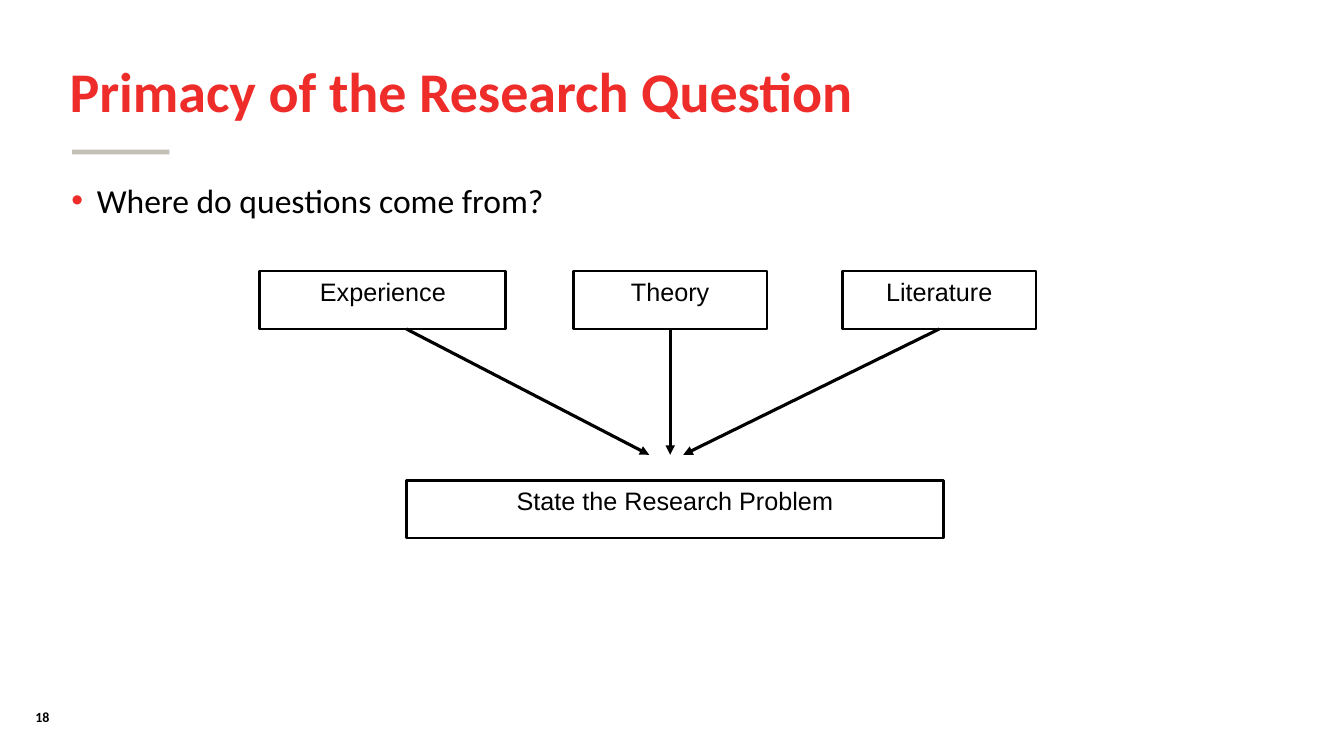
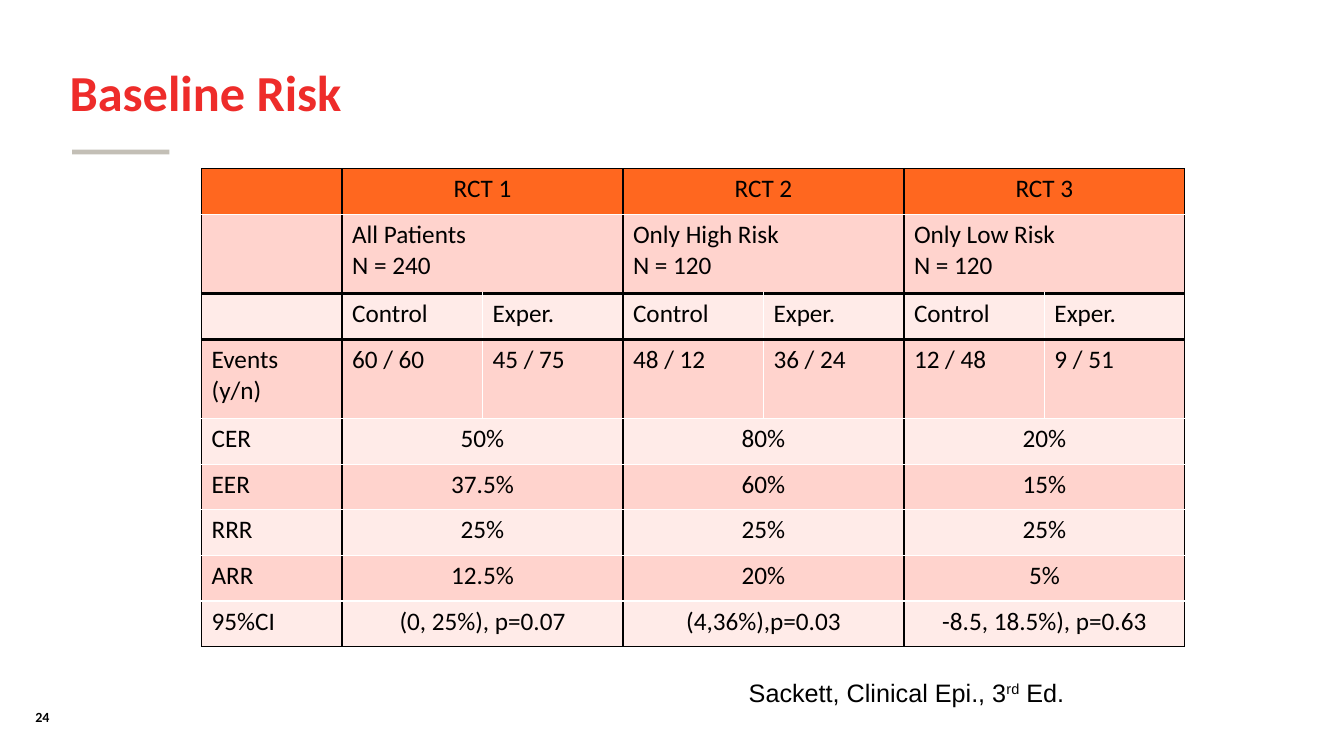
from dataclasses import dataclass
from typing import Optional

from lxml.etree import SubElement
from pptx import Presentation
from pptx.dml.color import RGBColor
from pptx.enum.shapes import MSO_CONNECTOR, MSO_SHAPE
from pptx.enum.text import MSO_ANCHOR, MSO_AUTO_SIZE, PP_ALIGN
from pptx.oxml.ns import qn
from pptx.util import Cm, Pt

# Shared look
RED, GREY, BLACK, WHITE = "EE2C2A", "C3BFB6", "000000", "FFFFFF"
ORANGE, ROSE, PALE = "FF671F", "FFD3CD", "FFEBE8"
HEAD, PLAIN = "Calibri", "Arial"


@dataclass
class Source:
    text: str
    left: float
    width: float
    tip: float                     # where the arrow ends
    start: Optional[float] = None  # where it leaves, if not at the middle


@dataclass
class Trial:
    name: str
    group: str
    size: str
    events: tuple[str, str]
    rates: tuple[str, ...]


SOURCES = [
    Source("Experience", 6.55, 6.2, 16.36, 10.24),
    Source("Theory", 14.45, 4.88, 16.89),
    Source("Literature", 21.23, 4.88, 17.22),
]
LABELS = ("CER", "EER", "RRR", "ARR", "95%CI")
TRIALS = [
    Trial("RCT 1", "All Patients", "N = 240", ("60 / 60", "45 / 75"),
          ("50%", "37.5%", "25%", "12.5%", "(0, 25%), p=0.07")),
    Trial("RCT 2", "Only High Risk", "N = 120", ("48 / 12", "36 / 24"),
          ("80%", "60%", "25%", "20%", "(4,36%),p=0.03")),
    Trial("RCT 3", "Only Low Risk", "N = 120", ("12 / 48", "9 / 51"),
          ("20%", "15%", "25%", "5%", "-8.5, 18.5%), p=0.63")),
]


def rgb(code: str) -> RGBColor:
    return RGBColor.from_string(code)


def put(para, text: str, size: float, face: str = HEAD,
        color: str = BLACK, bold: bool = False):
    """Add one run to a paragraph."""
    run = para.add_run()
    run.text = text
    font = run.font
    font.size, font.name, font.bold = Pt(size), face, bold
    font.color.rgb = rgb(color)
    return run


def text_box(slide, left: float, top: float, width: float, height: float,
             wrap: bool = True):
    """Add a text box and return its first paragraph."""
    box = slide.shapes.add_textbox(Cm(left), Cm(top), Cm(width), Cm(height))
    box.text_frame.word_wrap = wrap
    return box.text_frame.paragraphs[0]


def block(slide, left: float, top: float, width: float, height: float):
    """Add a rectangle with no shadow, fill or line."""
    rect = slide.shapes.add_shape(MSO_SHAPE.RECTANGLE, Cm(left), Cm(top),
                                  Cm(width), Cm(height))
    rect.shadow.inherit = False
    rect.fill.background()
    rect.line.fill.background()
    return rect


def base(deck, title: str, size: float, number: str):
    """Start a slide with its title, short rule and number."""
    slide = deck.slides.add_slide(deck.slide_layouts[5])
    head = slide.shapes.title
    head.left, head.top = Cm(1.5), Cm(1.02)
    head.width, head.height = Cm(28.55), Cm(2.74)
    frame = head.text_frame
    frame.word_wrap = True
    frame.auto_size = MSO_AUTO_SIZE.NONE
    frame.vertical_anchor = MSO_ANCHOR.MIDDLE
    para = frame.paragraphs[0]
    para.alignment, para.line_spacing = PP_ALIGN.LEFT, 0.9
    put(para, title, size, color=RED, bold=True)

    rule = block(slide, 1.82, 3.77, 2.45, 0.12)
    rule.fill.solid()
    rule.fill.fore_color.rgb = rgb(GREY)

    put(text_box(slide, 0.64, 17.72, 2.9, 0.68), number, 10, bold=True)
    return slide


def bullet(para) -> None:
    props = para._p.get_or_add_pPr()
    props.set("marL", str(Cm(0.64)))
    props.set("indent", str(-Cm(0.64)))
    tint = SubElement(props, qn("a:buClr"))
    SubElement(tint, qn("a:srgbClr"), val=RED)
    SubElement(props, qn("a:buFont"), typeface=PLAIN)
    SubElement(props, qn("a:buChar"), char="•")


def frame_box(slide, text: str, left: float, top: float, width: float):
    """Add an outlined box with its text at the top."""
    rect = block(slide, left, top, width, 1.46)
    rect.line.color.rgb = rgb(BLACK)
    rect.line.width = Pt(2)
    rect.text_frame.vertical_anchor = MSO_ANCHOR.TOP
    rect.text_frame.word_wrap = True
    para = rect.text_frame.paragraphs[0]
    para.alignment = PP_ALIGN.CENTER
    put(para, text, 18, PLAIN)
    return rect


def arrow(slide, box, source: Source) -> None:
    """Draw an arrow from a source box down to its tip."""
    start = Cm(source.start or source.tip)
    line = slide.shapes.add_connector(MSO_CONNECTOR.STRAIGHT, start,
                                      box.top + box.height,
                                      Cm(source.tip), Cm(11.46))
    if source.start is None:
        line.begin_connect(box, 2)
    line.line.color.rgb = rgb(BLACK)
    line.line.width = Pt(2.25)
    SubElement(line.line._get_or_add_ln(), qn("a:tailEnd"), type="triangle")
    SubElement(line._element.spPr, qn("a:effectLst"))


def edge(cell, side: str, color: str, width: float = 1) -> None:
    props = cell._tc.get_or_add_tcPr()
    line = SubElement(props, qn(f"a:ln{side}"), w=str(Pt(width)))
    fill = SubElement(line, qn("a:solidFill"))
    SubElement(fill, qn("a:srgbClr"), val=color)


def write(cell, lines: tuple[str, ...], center: bool) -> None:
    """Fill a cell with one paragraph per line."""
    frame = cell.text_frame
    for i, text in enumerate(lines):
        para = frame.add_paragraph() if i else frame.paragraphs[0]
        para.alignment = PP_ALIGN.CENTER if center else PP_ALIGN.LEFT
        put(para, text, 18)


def grid(slide) -> None:
    """Build the table: a label column, then two columns per trial."""
    tall, split = (1, 3), (2, 3)
    names = ("", "", "", "Events (y/n)") + LABELS
    rows, cols = len(names), 1 + 2 * len(TRIALS)
    table = slide.shapes.add_table(rows, cols, Cm(5.08), Cm(4.25),
                                   Cm(24.78), Cm(12.05)).table
    table.first_row = table.horz_banding = False
    for col in table.columns:
        col.width = Cm(3.54)
    for r, row in enumerate(table.rows):
        row.height = Cm(2 if r in tall else 1.15)

    # Borders, then fills
    under = {1: (BLACK, 2.25), 2: (BLACK, 2.25), rows - 1: (BLACK, 1)}
    above = {r + 1: look for r, look in under.items()} | {0: (BLACK, 1)}
    for r in range(rows):
        for c in range(cols):
            cell = table.cell(r, c)
            first = c % 2 == 1
            last = c > 0 and not first
            if r in split or not last:
                edge(cell, "L", WHITE if last else BLACK)
            edge(cell, "R", WHITE if first and r in split else BLACK)
            edge(cell, "T", *above.get(r, (WHITE, 1)))
            edge(cell, "B", *under.get(r, (WHITE, 1)))
            cell.fill.solid()
            shade = ORANGE if r == 0 else ROSE if r % 2 else PALE
            cell.fill.fore_color.rgb = rgb(shade)

    # Texts
    for r, name in enumerate(names):
        write(table.cell(r, 0), (name,), False)
    for i, trial in enumerate(TRIALS):
        c = 1 + 2 * i
        wide = {0: (trial.name,), 1: (trial.group, trial.size)}
        wide |= {4 + k: (rate,) for k, rate in enumerate(trial.rates)}
        for r, lines in wide.items():
            table.cell(r, c).merge(table.cell(r, c + 1))
            write(table.cell(r, c), lines, r != 1)
        for r, pair in zip(split, (("Control", "Exper."), trial.events)):
            for k, text in enumerate(pair):
                write(table.cell(r, c + k), (text,), False)


def question(deck) -> None:
    slide = base(deck, "Primacy of the Research Question", 40, "18")
    para = text_box(slide, 1.55, 4.52, 28.5, 12.09)
    para.line_spacing = 0.9
    bullet(para)
    put(para, "Where do questions come from?", 24)
    for source in SOURCES:
        box = frame_box(slide, source.text, source.left, 6.83, source.width)
        arrow(slide, box, source)
    frame_box(slide, "State the Research Problem", 10.24, 12.1, 13.54)


def risk(deck) -> None:
    slide = base(deck, "Baseline Risk", 36, "24")
    grid(slide)
    para = text_box(slide, 18.62, 16.94, 8.59, 1.02, wrap=False)
    put(para, "Sackett, Clinical Epi., 3", 18, PLAIN)
    rank = put(para, "rd", 18, PLAIN)
    rank._r.get_or_add_rPr().set("baseline", "30000")
    put(para, " Ed.", 18, PLAIN)


def main() -> None:
    deck = Presentation()
    deck.slide_width, deck.slide_height = Cm(33.87), Cm(19.05)
    question(deck)
    risk(deck)
    deck.save("out.pptx")


if __name__ == "__main__":
    main()
